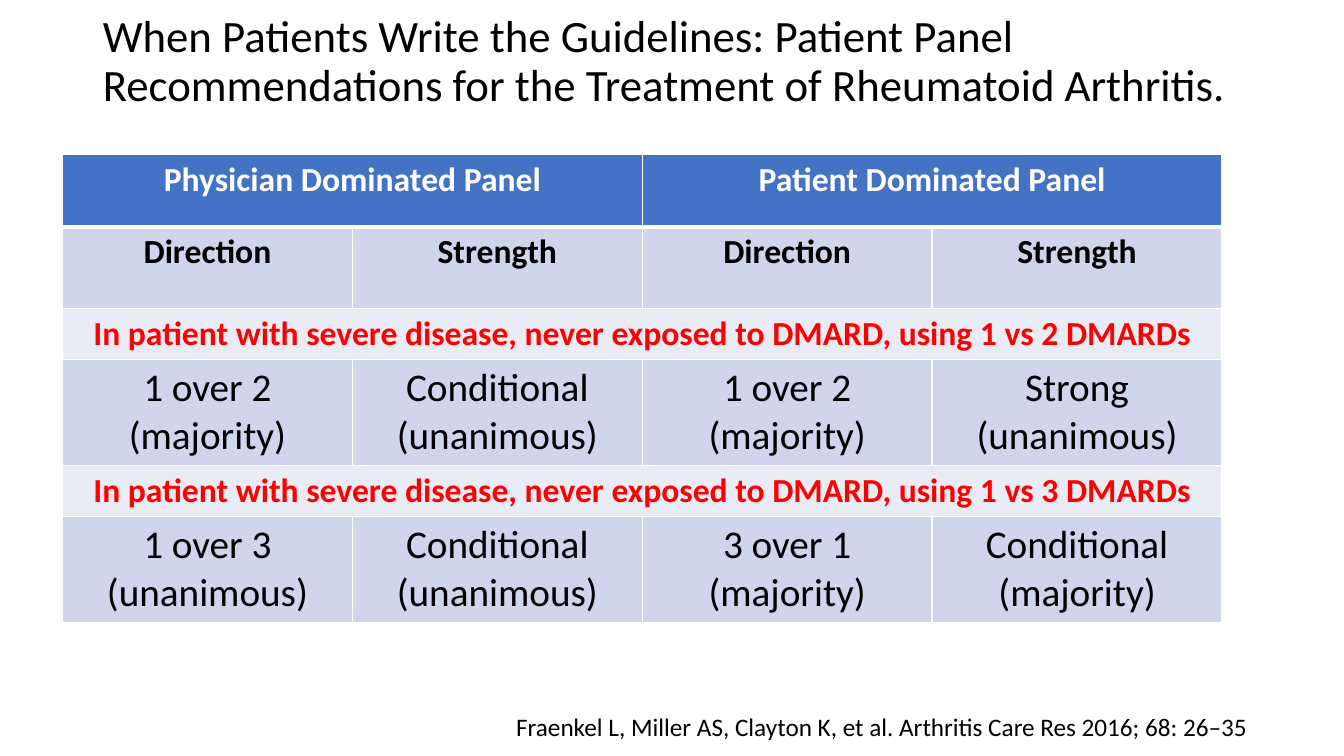
from dataclasses import dataclass

import pptx
import pptx.dml.color
import pptx.enum.text
import pptx.oxml
import pptx.oxml.ns
import pptx.util
from pptx.dml.color import RGBColor
from pptx.util import Inches

FONT = "Calibri"
BLACK = RGBColor(0x00, 0x00, 0x00)
WHITE = RGBColor(0xFF, 0xFF, 0xFF)
RED = RGBColor(0xFF, 0x00, 0x00)
BLUE = RGBColor(0x44, 0x72, 0xC4)
BAND_DARK = RGBColor(0xCF, 0xD5, 0xEA)
BAND_LIGHT = RGBColor(0xE9, 0xEB, 0xF5)


@dataclass(frozen=True)
class RowStyle:
    height: float
    fill: RGBColor
    color: RGBColor
    size: int = 24
    bold: bool = True


HEADER = RowStyle(0.72, BLUE, WHITE)
SUBHEADER = RowStyle(0.81, BAND_DARK, BLACK)
QUESTION = RowStyle(0.5, BAND_LIGHT, RED)
ANSWER = RowStyle(1.04, BAND_DARK, BLACK, 28, False)


@dataclass(frozen=True)
class PanelRow:
    style: RowStyle
    texts: tuple[str, ...]


COLUMNS = 4
ROWS = (
    PanelRow(HEADER, ("Physician Dominated Panel", "Patient Dominated Panel")),
    PanelRow(SUBHEADER, ("Direction", "Strength") * 2),
    PanelRow(QUESTION, ("In patient with severe disease, never exposed to DMARD, using 1 vs 2 DMARDs",)),
    PanelRow(ANSWER, ("1 over 2 (majority)", "Conditional (unanimous)",
                      "1 over 2 (majority)", "Strong (unanimous)")),
    PanelRow(QUESTION, ("In patient with severe disease, never exposed to DMARD, using 1 vs 3 DMARDs",)),
    PanelRow(ANSWER, ("1 over 3 (unanimous)", "Conditional (unanimous)",
                      "3 over 1 (majority)", "Conditional (majority)")),
)


def add_run(p, text: str, size: int, color: RGBColor = BLACK, bold: bool = False) -> None:
    r = p.add_run()
    r.text = text
    r.font.name = FONT
    r.font.size = pptx.util.Pt(size)
    r.font.bold = bold
    r.font.color.rgb = color


def set_borders(cell, top: int, bottom: int) -> None:
    """Draw white borders, with the top and bottom widths in points."""
    tc_pr = cell._tc.get_or_add_tcPr()
    for side, width in (("L", 1), ("R", 1), ("T", top), ("B", bottom)):
        tc_pr.append(pptx.oxml.parse_xml(
            f'<a:ln{side} {pptx.oxml.ns.nsdecls("a")} w="{pptx.util.Pt(width)}">'
            f'<a:solidFill><a:srgbClr val="{WHITE}"/></a:solidFill></a:ln{side}>'))


def add_title(s, text: str) -> None:
    sp = s.shapes.title
    sp.left, sp.top, sp.width, sp.height = map(Inches, (0.92, 0.4, 11.5, 0.93))
    tf = sp.text_frame
    tf.word_wrap = True
    tf.auto_size = pptx.enum.text.MSO_AUTO_SIZE.NONE
    tf.vertical_anchor = pptx.enum.text.MSO_ANCHOR.MIDDLE
    tf.margin_bottom = Inches(0.54)
    p = tf.paragraphs[0]
    p.alignment = pptx.enum.text.PP_ALIGN.LEFT
    p.line_spacing = 0.9
    add_run(p, text, 32)


def add_panel_table(s) -> None:
    height = sum(row.style.height for row in ROWS)
    table = s.shapes.add_table(len(ROWS), COLUMNS, Inches(0.62), Inches(1.53),
                               Inches(11.5), Inches(height)).table
    for i, row in enumerate(ROWS):
        style = row.style
        table.rows[i].height = Inches(style.height)
        for cell in table.rows[i].cells:
            set_borders(cell, 3 if i == 1 else 1, 3 if i == 0 else 1)
            cell.fill.solid()
            cell.fill.fore_color.rgb = style.fill
        span = COLUMNS // len(row.texts)
        for j, text in enumerate(row.texts):
            cell = table.cell(i, j * span)
            if span > 1:
                cell.merge(table.cell(i, (j + 1) * span - 1))
            p = cell.text_frame.paragraphs[0]
            p.alignment = pptx.enum.text.PP_ALIGN.CENTER
            add_run(p, text, style.size, style.color, style.bold)


def add_citation(s, text: str) -> None:
    sp = s.shapes.add_textbox(Inches(5.02), Inches(7.01), Inches(8.31), Inches(0.4))
    tf = sp.text_frame
    tf.word_wrap = True
    add_run(tf.paragraphs[0], text, 18)


def main() -> None:
    prs = pptx.Presentation()
    prs.slide_width, prs.slide_height = Inches(13.33), Inches(7.5)
    s = prs.slides.add_slide(prs.slide_layouts.get_by_name("Title Only"))
    add_title(s, "When Patients Write the Guidelines: Patient Panel "
                 "Recommendations for the Treatment of Rheumatoid Arthritis.")
    add_panel_table(s)
    add_citation(s, "Fraenkel L, Miller AS, Clayton K, et al. Arthritis Care Res 2016; 68: 26–35")
    prs.save("out.pptx")


if __name__ == "__main__":
    main()
